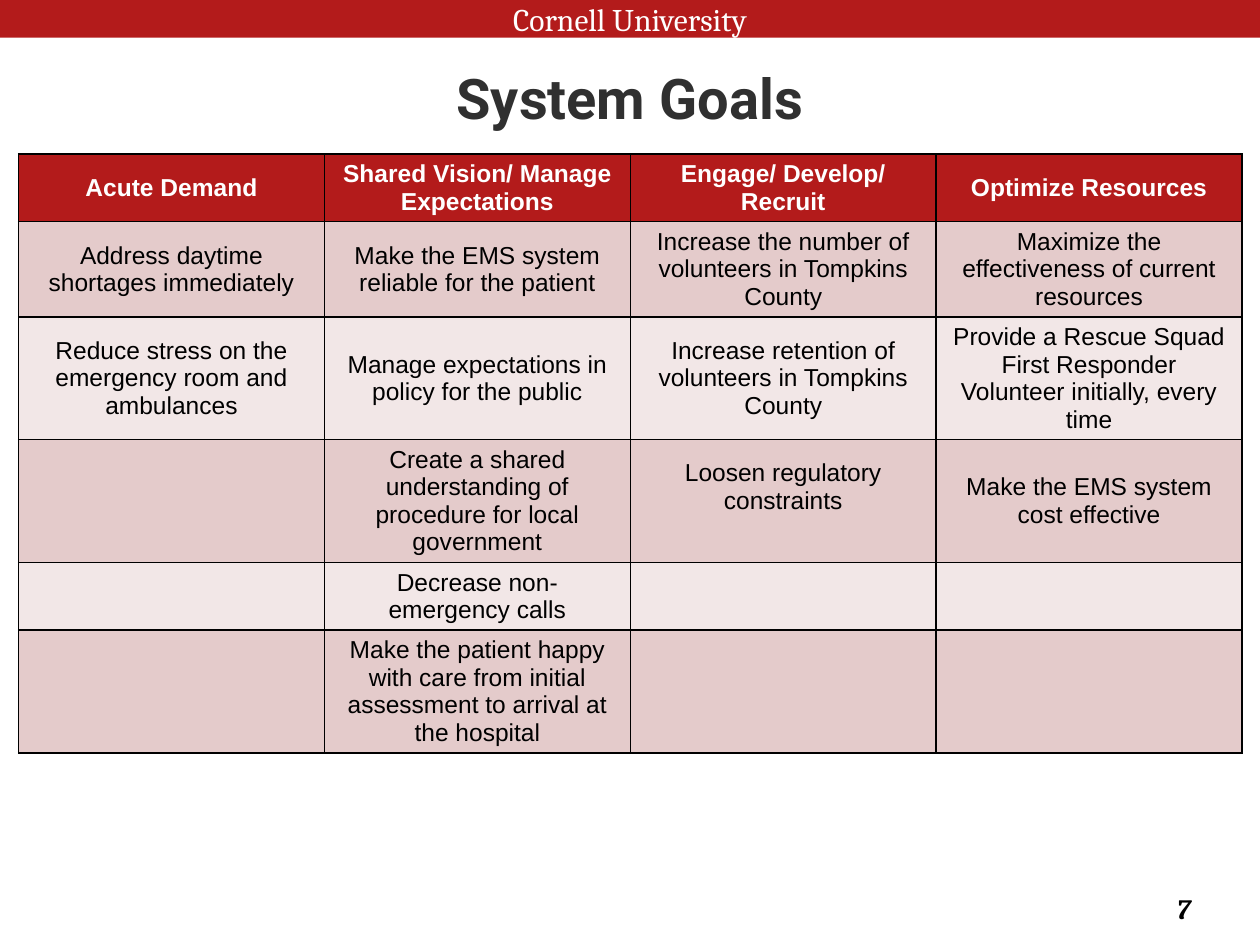
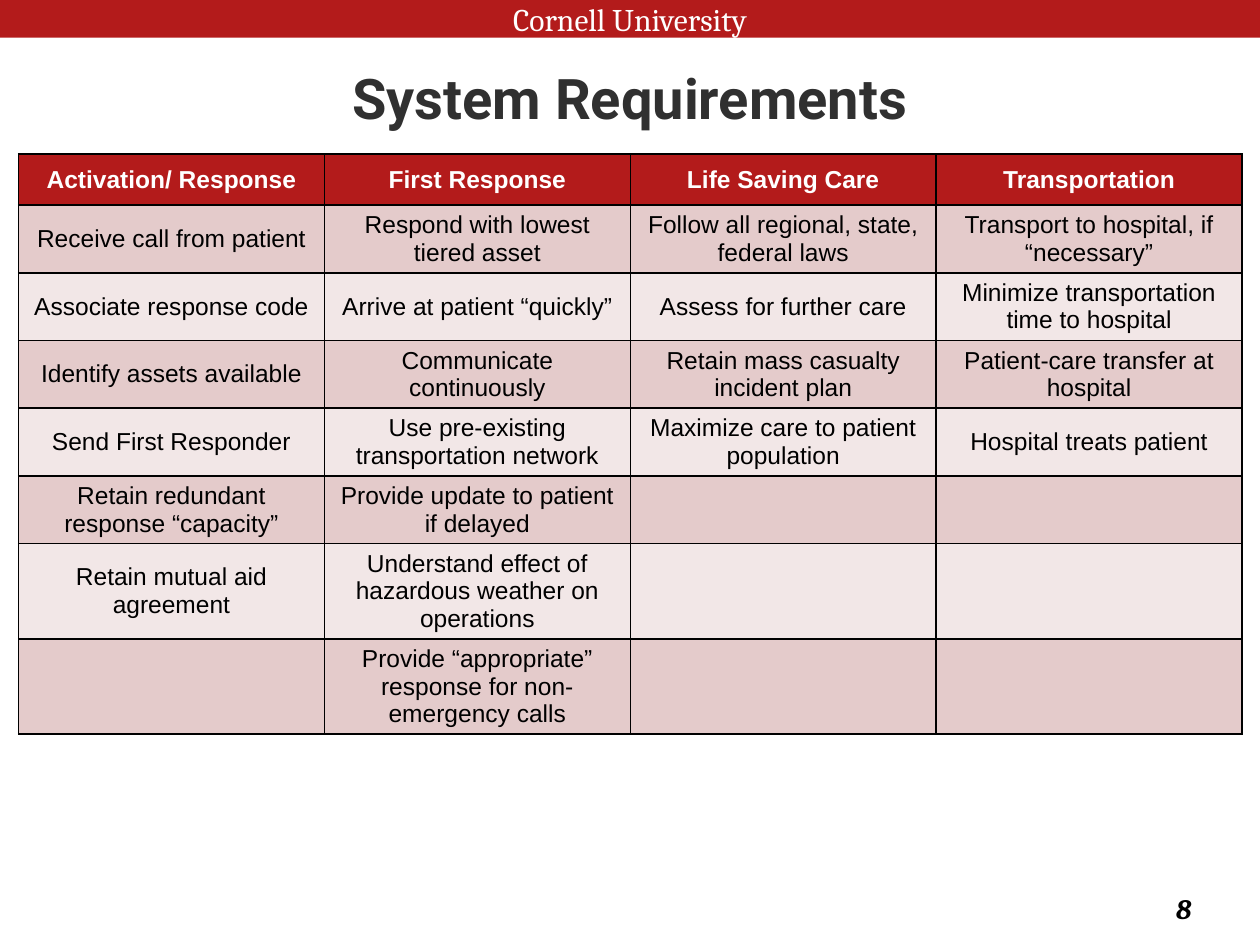
from lxml import etree
from pptx import Presentation
from pptx.dml.color import RGBColor
from pptx.enum.shapes import MSO_SHAPE
from pptx.enum.text import MSO_ANCHOR, MSO_AUTO_SIZE, PP_ALIGN
from pptx.oxml.ns import qn
from pptx.util import Pt

RECT = MSO_SHAPE.RECTANGLE
MIDDLE = MSO_ANCHOR.MIDDLE
CENTER = PP_ALIGN.CENTER
NO_FIT = MSO_AUTO_SIZE.NONE

# Content: page number, title, table rows
SCHOOL = "Cornell University"
SLIDES = [
    (7, "System Goals", [
        ["Acute Demand", "Shared Vision/ Manage Expectations",
         "Engage/ Develop/ Recruit", "Optimize Resources"],
        ["Address daytime shortages immediately",
         "Make the EMS system reliable for the patient",
         "Increase the number of volunteers in Tompkins County",
         "Maximize the effectiveness of current resources"],
        ["Reduce stress on the emergency room and ambulances",
         "Manage expectations in policy for the public",
         "Increase retention of volunteers in Tompkins County",
         "Provide a Rescue Squad First Responder Volunteer initially, every time"],
        ["", "Create a shared understanding of procedure for local government",
         "Loosen regulatory constraints", "Make the EMS system cost effective"],
        ["", "Decrease non-emergency calls", "", ""],
        ["", "Make the patient happy with care from initial assessment "
             "to arrival at the hospital", "", ""],
    ]),
    (8, "System Requirements", [
        ["Activation/ Response", "First Response", "Life Saving Care",
         "Transportation"],
        ["Receive call from patient", "Respond with lowest tiered asset",
         "Follow all regional, state, federal laws",
         "Transport to hospital, if “necessary”"],
        ["Associate response code", "Arrive at patient “quickly”",
         "Assess for further care", "Minimize transportation time to hospital"],
        ["Identify assets available", "Communicate continuously",
         "Retain mass casualty incident plan", "Patient-care transfer at hospital"],
        ["Send First Responder", "Use pre-existing transportation network",
         "Maximize care to patient population", "Hospital treats patient"],
        ["Retain redundant response “capacity”",
         "Provide update to patient if delayed", "", ""],
        ["Retain mutual aid agreement",
         "Understand effect of hazardous weather on operations", "", ""],
        ["", "Provide “appropriate” response for non-emergency calls", "", ""],
    ]),
]
RAISED = "Loosen regulatory constraints"  # sits one line above the middle

# Shared look
RED, INK, BLACK, WHITE = "B31B1B", "303030", "000000", "FFFFFF"
BANDS = ["F2E7E7", "E4CBCB"]  # even rows, odd rows
SLIDE_W, SLIDE_H = 720, 540
TABLE_X, TABLE_Y = 10.6, 88
COL_W, ROW_H = 174.8, 29.2
PAD_X, PAD_Y = 7.2, 3.6


def rgb(color):
    return RGBColor.from_string(color)


def write(tf, text, size, font, color, bold=False, italic=False):
    p = tf.paragraphs[0]
    p.alignment = CENTER
    r = p.add_run()
    r.text = text
    f = r.font
    f.size, f.name, f.bold, f.italic = Pt(size), font, bold, italic
    f.color.rgb = rgb(color)


def set_frame(tf, pad_y=PAD_Y):
    tf.word_wrap = True
    tf.auto_size = NO_FIT
    tf.vertical_anchor = MIDDLE
    tf.margin_left = tf.margin_right = Pt(PAD_X)
    tf.margin_top = tf.margin_bottom = Pt(pad_y)
    return tf


def add_band(s):
    sp = s.shapes.add_shape(RECT, 0, 0, Pt(SLIDE_W), Pt(21.6))
    sp.shadow.inherit = False
    sp.fill.solid()
    sp.fill.fore_color.rgb = rgb(RED)
    sp.line.fill.background()
    write(set_frame(sp.text_frame), SCHOOL, 18, "Cambria", WHITE)


def add_page_number(s, number):
    sp = s.shapes.add_textbox(Pt(640.8), Pt(504.7), Pt(71.3), Pt(28.8))
    write(set_frame(sp.text_frame), str(number), 16, "Cambria", BLACK, True, True)


def set_title(s, text):
    sp = s.shapes.title
    sp.left, sp.top, sp.width, sp.height = 0, Pt(26), Pt(SLIDE_W), Pt(59)
    write(set_frame(sp.text_frame, 7.2), text, 32, "Roboto", INK, True)


def add_borders(cell):
    props = cell._tc.get_or_add_tcPr()
    for side in ("lnL", "lnR", "lnT", "lnB"):
        line = etree.SubElement(props, qn(f"a:{side}"), w=str(Pt(1)))
        fill = etree.SubElement(line, qn("a:solidFill"))
        etree.SubElement(fill, qn("a:srgbClr"), val=BLACK)


def add_goal_table(s, rows):
    n_cols = len(rows[0])
    table = s.shapes.add_table(len(rows), n_cols, Pt(TABLE_X), Pt(TABLE_Y),
                               Pt(COL_W * n_cols), Pt(ROW_H * len(rows))).table
    for col in table.columns:
        col.width = Pt(COL_W)
    for i, texts in enumerate(rows):
        header = i == 0
        table.rows[i].height = Pt(ROW_H)
        for j, text in enumerate(texts):
            cell = table.cell(i, j)
            add_borders(cell)  # borders come before the fill in the cell's XML
            cell.fill.solid()
            cell.fill.fore_color.rgb = rgb(RED if header else BANDS[i % 2])
            cell.vertical_anchor = MIDDLE
            cell.margin_left = cell.margin_right = Pt(PAD_X)
            cell.margin_top = Pt(PAD_Y)
            cell.margin_bottom = Pt(PAD_Y + (16 if text == RAISED else 0))
            if text:
                write(cell.text_frame, text, 14, "Arial",
                      WHITE if header else BLACK, header)


def main():
    prs = Presentation()
    prs.slide_width, prs.slide_height = Pt(SLIDE_W), Pt(SLIDE_H)
    title_only = prs.slide_layouts[5]
    for number, title, rows in SLIDES:
        s = prs.slides.add_slide(title_only)
        add_page_number(s, number)
        add_band(s)
        set_title(s, title)
        add_goal_table(s, rows)
    prs.save("out.pptx")


if __name__ == "__main__":
    main()
